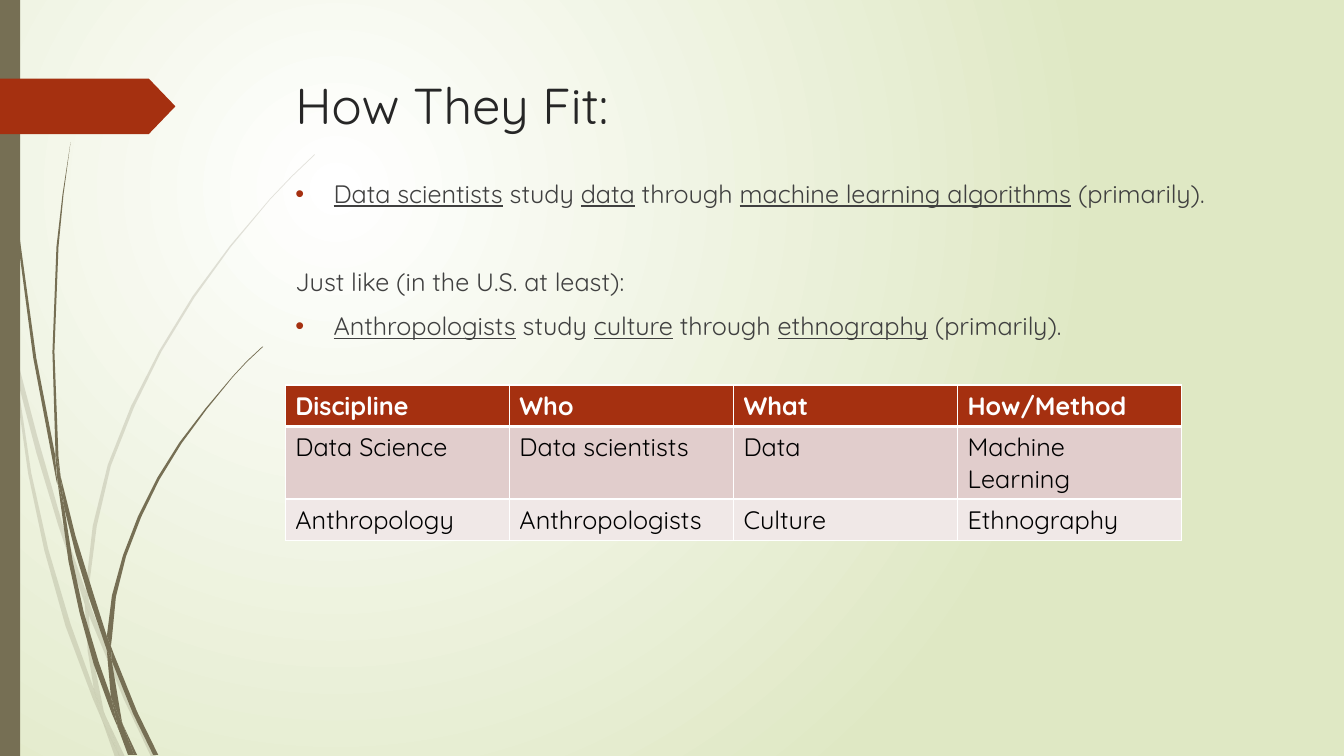
import pptx
import pptx.util
import pptx.dml.color
import pptx.enum.shapes
import pptx.oxml.ns
from lxml import etree
from pptx.util import Inches

# Content
TITLE = "How They Fit:"
# Lines: bulleted, space before, runs; underlined runs sit at even places
LINES = [
    (True, 10, ["Data scientists", " study ", "data", " through ",
                "machine learning algorithms", " (primarily)."]),
    (False, 41.4, ["", "Just like (in the U.S. at least):"]),
    (True, 10, ["Anthropologists", " study ", "culture", " through ",
                "ethnography", " (primarily)."]),
]
ROWS = [
    ["Discipline", "Who", "What", "How/Method"],
    ["Data Science", "Data scientists", "Data", "Machine Learning"],
    ["Anthropology", "Anthropologists", "Culture", "Ethnography"],
]
HEIGHTS = [0.41, 0.72, 0.41]

# Grass: outline corners of each piece, in inches
PALE = [
    [(.11, 3.5), (.09, 3.22), (0, 2.82), (0, 2.99), (.1, 3.44)],
    [(.58, 5.22), (.84, 5.99), (.85, 5.86), (.62, 5.2), (.37, 4.33),
     (.14, 3.45), (.17, 3.76), (.36, 4.49)],
    [(.92, 6.07), (.88, 5.96), (.88, 6.1), (1.23, 6.94), (1.5, 7.51),
     (1.55, 7.51), (1.27, 6.92)],
    [(1.19, 7.51), (1.24, 7.51), (1.05, 7.11)],
    [(.93, 6.83), (.7, 6.19), (.48, 5.45), (.31, 4.69), (.17, 3.76),
     (.11, 3.5), (.28, 4.7), (.44, 5.46), (.65, 6.21), (.92, 6.93),
     (1.01, 7.14), (.99, 7.07)],
    [(.84, 5.99), (.87, 6.46), (.93, 6.83), (.96, 6.92), (1.05, 7.11),
     (1.03, 7.06), (.91, 6.46), (.88, 6.1), (.88, 6.08)],
    [(.88, 5.84), (.96, 5.22), (1.1, 4.62), (1.33, 4.04), (1.6, 3.49),
     (1.93, 2.95), (2.29, 2.45), (2.68, 1.98), (2.9, 1.75), (3.12, 1.54),
     (3.12, 1.53), (2.89, 1.75), (2.68, 1.97), (2.28, 2.44), (1.91, 2.94),
     (1.58, 3.48), (1.3, 4.03), (1.07, 4.61), (.92, 5.22), (.85, 5.84),
     (.85, 5.86), (.88, 5.96)],
    [(1.01, 7.14), (1.14, 7.51), (1.19, 7.51)],
    [(.88, 6.08), (.88, 6.1), (.88, 5.96), (.85, 5.86), (.84, 5.99)],
    [(.96, 6.92), (.93, 6.83), (.99, 7.07), (1.01, 7.14), (1.19, 7.51),
     (1.05, 7.11)],
]
DARK = [
    [(.07, 1.1), (.17, 2.33), (.33, 3.55), (.56, 4.77), (.57, 4.81),
     (.55, 4.57), (.55, 4.53), (.36, 3.55), (.19, 2.32), (.08, 1.09),
     (.05, .48), (.04, 0), (.03, 0), (.04, .48)],
    [(.88, 5.92), (1.06, 6.45), (1.06, 6.33), (1.06, 6.31), (.93, 5.9),
     (.75, 5.32), (.6, 4.72), (.64, 5.05), (.75, 5.49)],
    [(1.13, 6.49), (1.1, 6.41), (1.11, 6.56), (1.32, 7.08), (1.52, 7.49),
     (1.57, 7.49), (1.36, 7.06)],
    [(1.1, 6.91), (.98, 6.57), (.83, 6.07), (.72, 5.56), (.64, 5.05),
     (.57, 4.77), (.68, 5.57), (.79, 6.08), (.93, 6.59), (1.11, 7.08),
     (1.17, 7.22), (1.16, 7.17)],
    [(.6, 4.72), (.58, 4.53), (.54, 3.49), (.58, 2.45), (.63, 1.93),
     (.7, 1.41), (.62, 1.93), (.56, 2.45), (.52, 3.49), (.55, 4.49)],
    [(1.33, 7.49), (1.36, 7.49), (1.22, 7.19)],
    [(.57, 4.77), (.64, 5.05), (.6, 4.72), (.55, 4.49), (.55, 4.53)],
    [(1.11, 6.33), (1.15, 5.92), (1.25, 5.52), (1.4, 5.13), (1.58, 4.76),
     (1.8, 4.4), (2.05, 4.06), (2.31, 3.74), (2.45, 3.59), (2.61, 3.44),
     (2.6, 3.44), (2.45, 3.58), (2.31, 3.73), (2.04, 4.05), (1.78, 4.39),
     (1.56, 4.74), (1.37, 5.12), (1.22, 5.51), (1.11, 5.91), (1.06, 6.31),
     (1.1, 6.41)],
    [(1.17, 7.22), (1.27, 7.49), (1.31, 7.49)],
    [(1.06, 6.45), (1.1, 6.91), (1.16, 7.06), (1.22, 7.19), (1.21, 7.16),
     (1.11, 6.56), (1.09, 6.51)],
    [(1.06, 6.45), (1.09, 6.51), (1.11, 6.56), (1.1, 6.41), (1.06, 6.31),
     (1.06, 6.33)],
    [(1.16, 7.06), (1.1, 6.91), (1.16, 7.17), (1.17, 7.22), (1.3, 7.49),
     (1.33, 7.49), (1.22, 7.19)],
]

THEME = {
    "font": "Quicksand", "head": 36, "body": 18,
    "ink": "262626", "text": "404040", "red": "A53010", "stem": "766F54",
    "white": "FFFFFF", "black": "000000", "glow": ["FFFFFF", "DFE8C4"],
    "rows": ["A53010", "E1CDCC", "F0E8E7"],
}

qn = pptx.oxml.ns.qn
KIND = pptx.enum.shapes.MSO_SHAPE


def rgb(code):
    return pptx.dml.color.RGBColor.from_string(code)


def add(node, tag, **attrs):
    return etree.SubElement(node, qn(tag), attrs)


def style(para, size, color, bold=False):
    font = para.font
    font.name, font.size, font.bold = THEME["font"], pptx.util.Pt(size), bold
    font.color.rgb = rgb(color)


def paint(shape, color):
    shape.shadow.inherit = False
    shape.fill.solid()
    shape.fill.fore_color.rgb = rgb(color)
    shape.line.fill.background()


def box(slide, *area):
    frame = slide.shapes.add_textbox(*map(Inches, area)).text_frame
    frame.word_wrap = True
    return frame


def blade(slide, knots, alpha=None):
    edge = [(Inches(x), Inches(y)) for x, y in knots]
    form = slide.shapes.build_freeform(*edge[0])
    form.add_line_segments(edge[1:])
    shape = form.convert_to_shape()
    paint(shape, THEME["stem"])
    if alpha:
        fill = shape._element.spPr.find(qn("a:solidFill"))
        add(fill[0], "a:alpha", val=str(alpha * 1000))


def backdrop(slide):
    fill = slide.background.fill
    fill.gradient()
    for stop, color, pos in zip(fill.gradient_stops, THEME["glow"], (0, 1)):
        stop.color.rgb, stop.position = rgb(color), pos
    grad = next(slide._element.iter(qn("a:gradFill")))
    grad.remove(grad.find(qn("a:lin")))
    ring = add(grad, "a:path", path="circle")
    add(ring, "a:fillToRect", l="50000", t="50000", r="100000", b="100000")


def decor(slide):
    for knots in PALE:
        blade(slide, knots, 20)
    for knots in DARK:
        blade(slide, knots)
    bar = slide.shapes.add_shape(KIND.RECTANGLE, 0, 0, Inches(0.2), Inches(7.5))
    paint(bar, THEME["stem"])
    tag = slide.shapes.add_shape(KIND.PENTAGON, 0, Inches(0.78),
                                 Inches(1.74), Inches(0.55))
    tag.adjustments[0] = 0.48
    paint(tag, THEME["red"])


def words(slide):
    head = box(slide, 2.83, 0.69, 9.75, 1.4).paragraphs[0]
    head.text = TITLE
    style(head, THEME["head"], THEME["ink"])
    frame = box(slide, 2.83, 1.72, 9.75, 2.4)
    for i, (dot, gap, runs) in enumerate(LINES):
        para = frame.add_paragraph() if i else frame.paragraphs[0]
        para.space_before = pptx.util.Pt(gap)
        if dot:
            props = para._p.get_or_add_pPr()
            props.set("marL", str(Inches(0.38)))
            props.set("indent", str(-Inches(0.38)))
            add(add(props, "a:buClr"), "a:srgbClr", val=THEME["red"])
            add(props, "a:buFont", typeface="Arial")
            add(props, "a:buChar", char="•")
        style(para, THEME["body"], THEME["text"])
        for j, text in enumerate(runs):
            if text:
                run = para.add_run()
                run.text = text
                run.font.underline = j % 2 == 0


def border(cell):
    props = cell._tc.get_or_add_tcPr()
    for side, width in zip("LRTB", (1, 1, 1, 3)):
        line = add(props, "a:ln" + side, w=str(pptx.util.Pt(width)))
        add(add(line, "a:solidFill"), "a:srgbClr", val=THEME["white"])


def grid(slide):
    table = slide.shapes.add_table(
        len(ROWS), len(ROWS[0]), Inches(2.83), Inches(3.82),
        Inches(8.89), Inches(sum(HEIGHTS))).table
    for i, row in enumerate(ROWS):
        table.rows[i].height = Inches(HEIGHTS[i])
        for j, text in enumerate(row):
            cell = table.cell(i, j)
            cell.text = text
            style(cell.text_frame.paragraphs[0], THEME["body"],
                  THEME["black" if i else "white"], i == 0)
            if i == 0:
                border(cell)
            cell.fill.solid()
            cell.fill.fore_color.rgb = rgb(THEME["rows"][i])


def main():
    deck = pptx.Presentation()
    deck.slide_width, deck.slide_height = Inches(13.33), Inches(7.5)
    slide = deck.slides.add_slide(deck.slide_layouts[6])
    for part in (backdrop, decor, words, grid):
        part(slide)
    deck.save("out.pptx")


if __name__ == "__main__":
    main()
